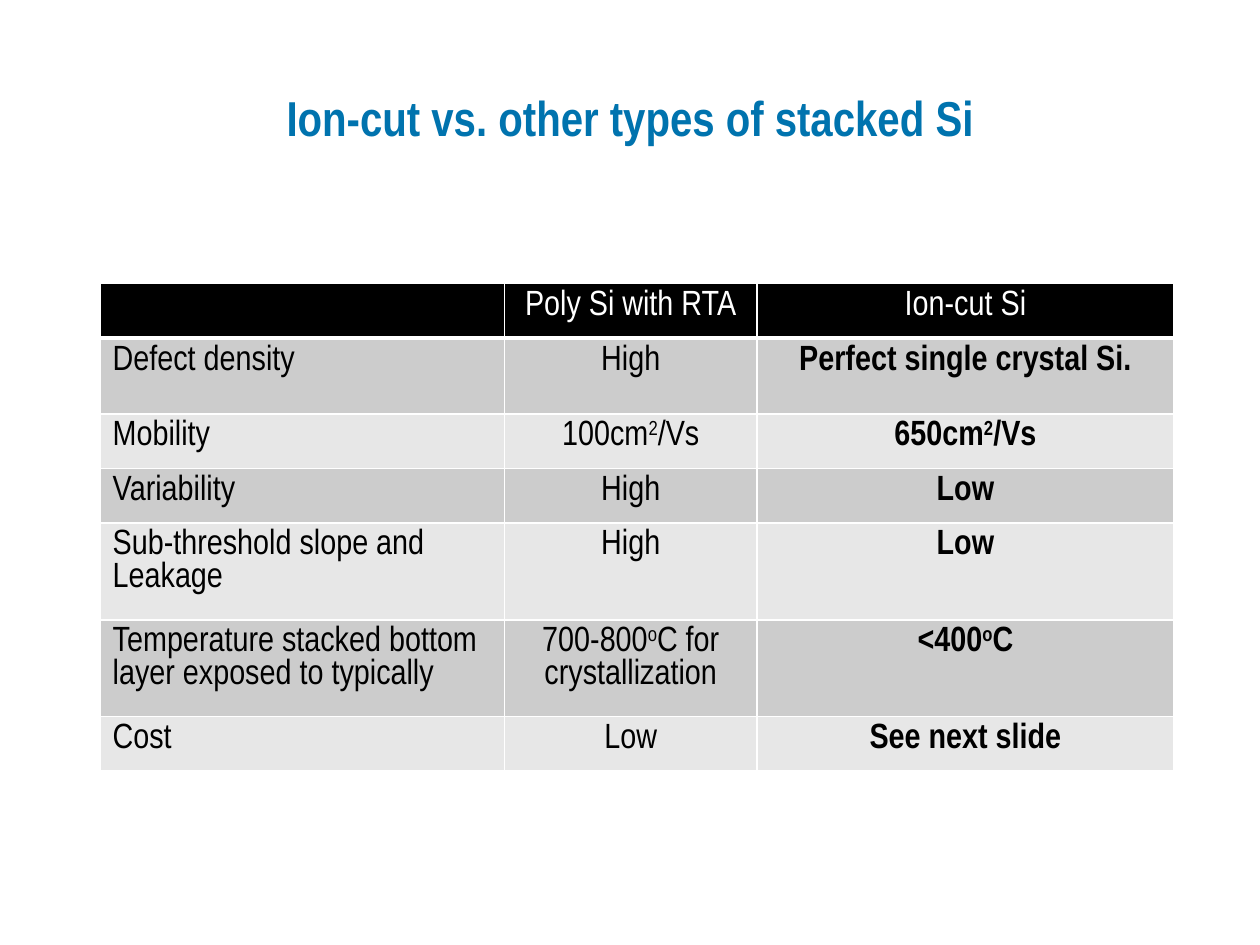
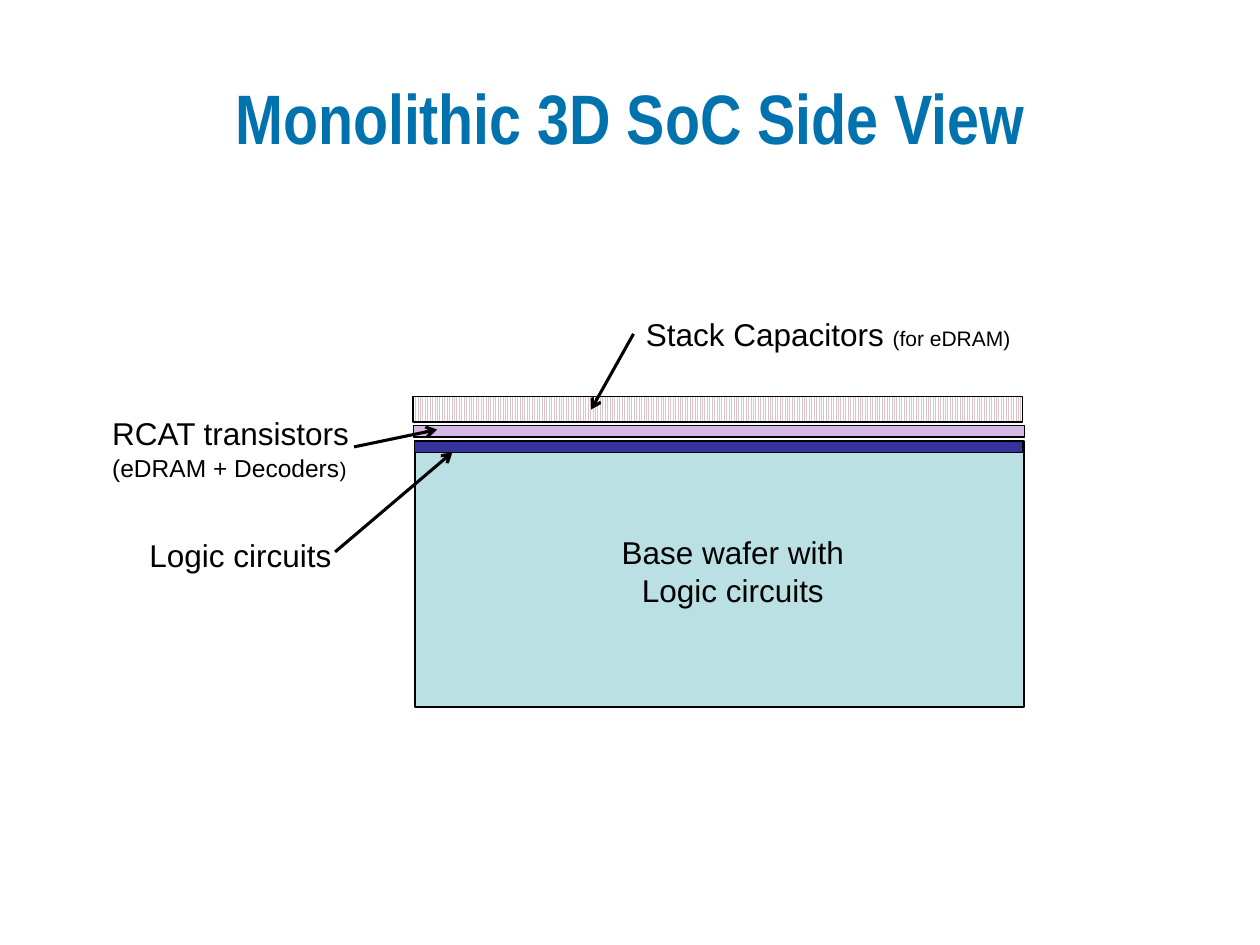
from dataclasses import dataclass

from lxml import etree
from pptx import Presentation
from pptx import util as u
from pptx.dml.color import RGBColor
from pptx.enum import dml, shapes, text
from pptx.oxml import ns

Pt = u.Pt
LEFT, CENTER = text.PP_ALIGN.LEFT, text.PP_ALIGN.CENTER


@dataclass(frozen=True)
class Theme:
    heading_font: str = "Arial Narrow"
    body_font: str = "Arial"
    heading: str = "0073AE"
    ink: str = "000000"
    paper: str = "FFFFFF"
    bands: tuple = ("CCCCCC", "E7E7E7")
    wafer: str = "BBE0E3"
    logic: str = "333399"
    transistors: str = "D6B8E6"
    capacitors: str = "DBC3CA"
    cell_size: float = 20
    label_size: float = 18
    detail_size: float = 14
    small_size: float = 12
    rule: float = 1
    header_rule: float = 3
    outline: float = 0.75
    arrow: float = 1.75


THEME = Theme()

COMPARISON_TITLE = ("Ion-cut vs. other types of stacked Si", 28)
COMPARISON = [
    ("", "Poly Si with RTA", "Ion-cut Si"),
    ("Defect density", "High", "Perfect single crystal Si."),
    ("Mobility", "100cm^2^/Vs", "650cm^2^/Vs"),
    ("Variability", "High", "Low"),
    ("Sub-threshold slope and Leakage", "High", "Low"),
    ("Temperature stacked bottom layer exposed to typically",
     "700-800^o^C for crystallization", "<400^o^C"),
    ("Cost", "Low", "See next slide"),
]
COLUMN_WIDTHS = (231, 144.5, 238)
ROW_HEIGHT, DEFECT_ROW_HEIGHT = 29.2, 43.2

SIDE_VIEW_TITLE = ("Monolithic 3D SoC Side View", 40)
LAYERS = [
    ((237, 252, 348, 152), THEME.wafer, THEME.rule),
    ((237, 252, 347.5, 6.5), THEME.logic, THEME.outline),
    ((236.3, 243.2, 349, 6.5), THEME.transistors, THEME.outline),
    ((236, 226.8, 348.5, 14.4), None, THEME.outline),
]
LABELS = [
    ((342.8, 301, 152, 50.4), CENTER,
     [[("Base wafer with Logic circuits", THEME.label_size)]]),
    ((57, 233.3, 159, 42.5), LEFT,
     [[("RCAT transistors", THEME.label_size)],
      [("(eDRAM + Decoders", THEME.detail_size), (")", THEME.small_size)]]),
    ((362, 176.4, 307, 29), LEFT,
     [[("Stack Capacitors ", THEME.label_size), ("(for eDRAM)", THEME.small_size)]]),
    ((78.3, 302.6, 124, 29), LEFT, [[("Logic circuits", THEME.label_size)]]),
]
ARROWS = [
    (191.5, 315.4, 258.5, 258.5),
    (202.3, 255.4, 249.8, 245.5),
    (362, 190.8, 337.8, 234),
]


def color(code):
    return RGBColor.from_string(code)


def add_run(paragraph, words, size, font, ink=THEME.ink, bold=False, raised=False):
    run = paragraph.add_run()
    run.text = words
    run.font.size, run.font.name, run.font.bold = Pt(size), font, bold
    run.font.color.rgb = color(ink)
    if raised:
        run._r.get_or_add_rPr().set("baseline", "30000")


def add_frame(slide, box):
    frame = slide.shapes.add_textbox(*map(Pt, box)).text_frame
    frame.word_wrap = True
    return frame


def new_slide(deck, title):
    slide = deck.slides.add_slide(deck.slide_layouts[6])
    heading = add_frame(slide, (36, 21.6, 648, 90))
    heading.vertical_anchor = text.MSO_ANCHOR.MIDDLE
    heading.paragraphs[0].alignment = CENTER
    add_run(heading.paragraphs[0], *title, THEME.heading_font, THEME.heading, True)
    return slide


def add_borders(cell, header):
    properties = cell._tc.get_or_add_tcPr()
    for side in "LRTB":
        width = THEME.header_rule if header and side == "B" else THEME.rule
        border = etree.SubElement(properties, ns.qn(f"a:ln{side}"), w=str(Pt(width)))
        fill = etree.SubElement(border, ns.qn("a:solidFill"))
        etree.SubElement(fill, ns.qn("a:srgbClr"), val=THEME.paper)


def fill_cell(cell, words, row, column):
    header = row == 0
    add_borders(cell, header)
    cell.fill.solid()
    cell.fill.fore_color.rgb = color(THEME.ink if header else THEME.bands[(row - 1) % 2])
    paragraph = cell.text_frame.paragraphs[0]
    paragraph.alignment = CENTER if column else LEFT
    for index, part in enumerate(words.split("^")):
        if part:
            add_run(paragraph, part, THEME.cell_size, THEME.heading_font,
                    THEME.paper if header else THEME.ink,
                    bold=column == 2 and not header, raised=index % 2 == 1)


def add_comparison(slide):
    heights = [ROW_HEIGHT] * len(COMPARISON)
    heights[1] = DEFECT_ROW_HEIGHT
    box = (57.2, 162, sum(COLUMN_WIDTHS), sum(heights))
    comparison = slide.shapes.add_table(
        len(COMPARISON), len(COLUMN_WIDTHS), *map(Pt, box)).table
    comparison.first_row = comparison.horz_banding = False
    for column, width in zip(comparison.columns, COLUMN_WIDTHS):
        column.width = Pt(width)
    for row, (height, entries) in enumerate(zip(heights, COMPARISON)):
        comparison.rows[row].height = Pt(height)
        for column, words in enumerate(entries):
            fill_cell(comparison.cell(row, column), words, row, column)


def add_layer(slide, box, fill, outline):
    layer = slide.shapes.add_shape(shapes.MSO_SHAPE.RECTANGLE, *map(Pt, box))
    layer.shadow.inherit = False
    if fill:
        layer.fill.solid()
        layer.fill.fore_color.rgb = color(fill)
    else:
        layer.fill.patterned()
        layer.fill.pattern = dml.MSO_PATTERN.LIGHT_VERTICAL
        layer.fill.fore_color.rgb = color(THEME.capacitors)
        layer.fill.back_color.rgb = color(THEME.paper)
    layer.line.color.rgb = color(THEME.ink)
    layer.line.width = Pt(outline)


def add_label(slide, box, alignment, lines):
    frame = add_frame(slide, box)
    for index, line in enumerate(lines):
        paragraph = frame.add_paragraph() if index else frame.paragraphs[0]
        paragraph.alignment = alignment
        if index:
            paragraph.line_spacing = 0.3
            paragraph.space_before = Pt(10.3)
        for words, size in line:
            add_run(paragraph, words, size, THEME.body_font)


def add_arrow(slide, ends):
    arrow = slide.shapes.add_connector(shapes.MSO_CONNECTOR.STRAIGHT, *map(Pt, ends))
    arrow.line.color.rgb = color(THEME.ink)
    arrow.line.width = Pt(THEME.arrow)
    etree.SubElement(arrow.line._get_or_add_ln(), ns.qn("a:tailEnd"), type="arrow")
    etree.SubElement(arrow._element.spPr, ns.qn("a:effectLst"))


def main():
    deck = Presentation()
    deck.slide_width, deck.slide_height = Pt(720), Pt(540)
    add_comparison(new_slide(deck, COMPARISON_TITLE))
    side_view = new_slide(deck, SIDE_VIEW_TITLE)
    for layer in LAYERS:
        add_layer(side_view, *layer)
    for label in LABELS:
        add_label(side_view, *label)
    for ends in ARROWS:
        add_arrow(side_view, ends)
    deck.save("out.pptx")


if __name__ == "__main__":
    main()
